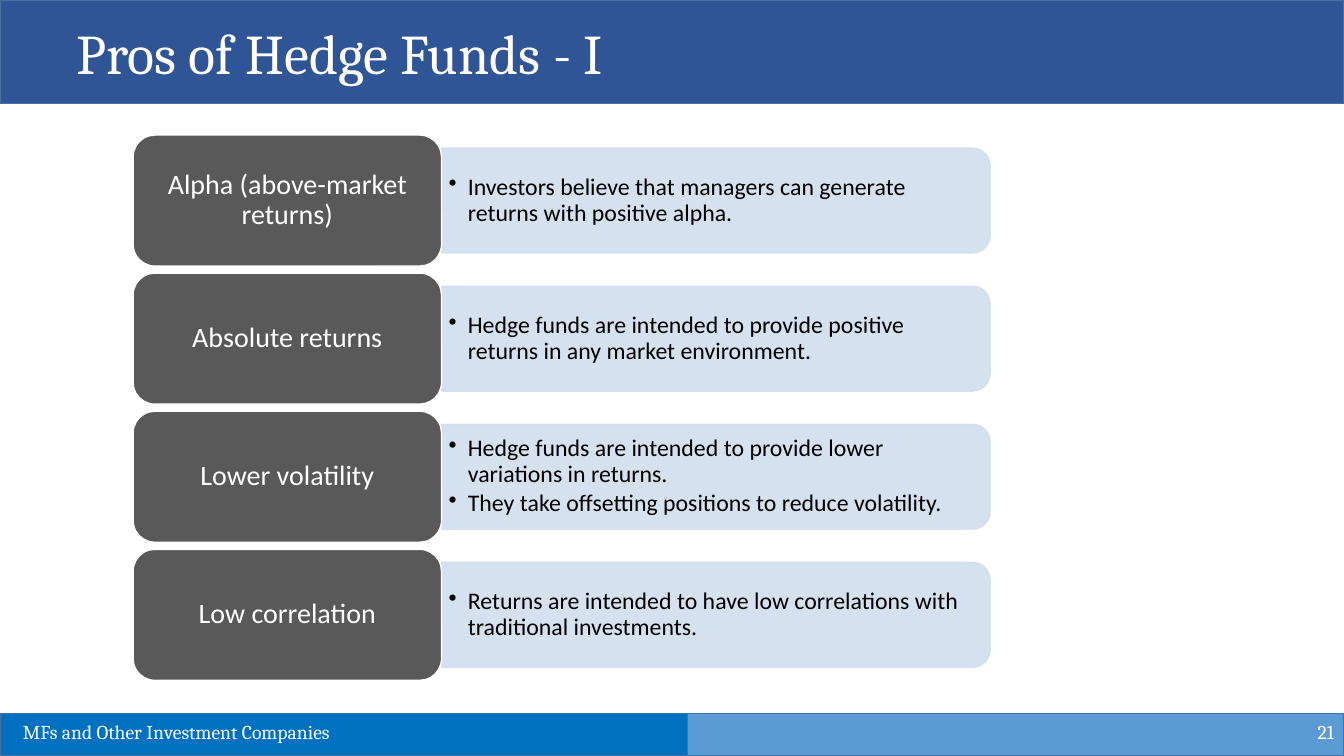
from dataclasses import dataclass

from lxml.etree import SubElement
from pptx import Presentation
from pptx.dml.color import RGBColor
from pptx.enum.shapes import MSO_SHAPE
from pptx.enum.text import MSO_ANCHOR, MSO_AUTO_SIZE, PP_ALIGN
from pptx.oxml.ns import qn
from pptx.util import Pt

TITLE = "Pros of Hedge Funds - I"
FOOTER = "MFs and Other Investment Companies"
PAGE_NUMBER = "21"
PROS = [
    ("Alpha (above-market returns)",
     ["Investors believe that managers can generate returns with positive alpha."]),
    ("Absolute returns",
     ["Hedge funds are intended to provide positive returns in any market environment."]),
    ("Lower volatility",
     ["Hedge funds are intended to provide lower variations in returns.",
      "They take offsetting positions to reduce volatility."]),
    ("Low correlation",
     ["Returns are intended to have low correlations with traditional investments."]),
]


@dataclass(frozen=True)
class Theme:
    heading_font: str = "Cambria"
    body_font: str = "Calibri"
    title_size: int = 40
    label_size: int = 20
    bullet_size: int = 17
    footer_size: int = 14
    title_band: str = "2F5597"
    footer_left: str = "0070C0"
    footer_right: str = "5B9BD5"
    band_line: str = "43739E"
    label: str = "595959"
    panel: str = "D2DEEF"
    white: str = "FFFFFF"
    black: str = "000000"


THEME = Theme()
PX = 9144  # 100 px to the inch
WIDTH, HEIGHT = 1333, 750
FOOTER_TOP, FOOTER_SPLIT = 708, 682
LABEL_LEFT, LABEL_WIDTH, LABEL_HEIGHT = 132, 306, 130
PANEL_LEFT, PANEL_WIDTH, PANEL_HEIGHT = LABEL_LEFT + LABEL_WIDTH, 544, 104
LIST_WIDTH, LIST_HEIGHT = 539, 94
ROW_TOP, ROW_STEP = 134, 137
BULLET_INDENT = 19
PANEL_OPACITY = 90


def px(*lengths):
    return [round(length * PX) for length in lengths]


def add_block(page, kind, area, fill, line):
    block = page.shapes.add_shape(kind, *px(*area))
    block.shadow.inherit = False
    block.fill.solid()
    block.fill.fore_color.rgb = RGBColor.from_string(fill)
    block.line.color.rgb = RGBColor.from_string(line)
    block.line.width = Pt(1)
    return block


def write(shape, lines, font, size, color, align=PP_ALIGN.LEFT,
          anchor=MSO_ANCHOR.TOP, margins=(10, 5), spacing=1.0):
    frame = shape.text_frame
    frame.word_wrap = True
    frame.auto_size = MSO_AUTO_SIZE.NONE
    frame.vertical_anchor = anchor
    frame.margin_left, frame.margin_top = px(*margins)
    frame.margin_right, frame.margin_bottom = px(*margins)
    frame.text = "\n".join(lines)
    for para in frame.paragraphs:
        para.alignment = align
        para.line_spacing = spacing
        para.font.name = font
        para.font.size = Pt(size)
        para.font.color.rgb = RGBColor.from_string(color)
    return frame.paragraphs


def add_bullet(para):
    para.space_after = Pt(2.5)
    properties = para._p.get_or_add_pPr()
    indent = BULLET_INDENT * PX
    properties.set("marL", str(indent))
    properties.set("indent", str(-indent))
    bullet = SubElement(properties, qn("a:buChar"))
    bullet.set("char", "•")
    # The schema wants the bullet ahead of the default run properties.
    defaults = properties.find(qn("a:defRPr"))
    if defaults is not None:
        defaults.addprevious(bullet)


def add_panel(page, middle):
    """Add a panel rounded on its right side, as a quarter-turned tab."""
    center = PANEL_LEFT + PANEL_WIDTH / 2
    area = (center - PANEL_HEIGHT / 2, middle - PANEL_WIDTH / 2, PANEL_HEIGHT, PANEL_WIDTH)
    panel = add_block(page, MSO_SHAPE.ROUND_2_SAME_RECTANGLE, area, THEME.panel, THEME.panel)
    panel.rotation = 90
    for color in panel._element.spPr.iter(qn("a:srgbClr")):
        SubElement(color, qn("a:alpha")).set("val", str(PANEL_OPACITY * 1000))


def add_pro(page, top, label, points):
    middle = top + LABEL_HEIGHT / 2
    add_panel(page, middle)
    box = page.shapes.add_textbox(
        *px(PANEL_LEFT, middle - LIST_HEIGHT / 2, LIST_WIDTH, LIST_HEIGHT))
    for para in write(box, points, THEME.body_font, THEME.bullet_size, THEME.black,
                      anchor=MSO_ANCHOR.MIDDLE, margins=(7, 4), spacing=0.9):
        add_bullet(para)
    card = add_block(page, MSO_SHAPE.ROUNDED_RECTANGLE,
                     (LABEL_LEFT, top, LABEL_WIDTH, LABEL_HEIGHT), THEME.label, THEME.white)
    write(card, [label], THEME.body_font, THEME.label_size, THEME.white,
          PP_ALIGN.CENTER, MSO_ANCHOR.MIDDLE, (8, 4), 0.9)


def add_title(page):
    band = add_block(page, MSO_SHAPE.RECTANGLE, (0, 0, WIDTH, 103),
                     THEME.title_band, THEME.band_line)
    title = page.shapes.title
    title._element.addprevious(band._element)
    title.left, title.top, title.width, title.height = px(66, 13, 1208, 77)
    write(title, [TITLE], THEME.heading_font, THEME.title_size, THEME.white)


def add_footer(page):
    height = HEIGHT - FOOTER_TOP
    for left, right, fill in ((0, FOOTER_SPLIT, THEME.footer_left),
                              (FOOTER_SPLIT, WIDTH, THEME.footer_right)):
        add_block(page, MSO_SHAPE.RECTANGLE, (left, FOOTER_TOP, right - left, height),
                  fill, THEME.band_line)
    for text, area, align, anchor in (
            (PAGE_NUMBER, (1033, 706, 300, 40), PP_ALIGN.RIGHT, MSO_ANCHOR.MIDDLE),
            (FOOTER, (13, 709, 554, 34), PP_ALIGN.LEFT, MSO_ANCHOR.TOP)):
        box = page.shapes.add_textbox(*px(*area))
        write(box, [text], THEME.heading_font, THEME.footer_size, THEME.white, align, anchor)


def main():
    deck = Presentation()
    deck.slide_width, deck.slide_height = px(WIDTH, HEIGHT)
    page = deck.slides.add_slide(deck.slide_layouts.get_by_name("Title Only"))
    add_title(page)
    add_footer(page)
    for row, (label, points) in enumerate(PROS):
        add_pro(page, ROW_TOP + row * ROW_STEP, label, points)
    deck.save("out.pptx")


if __name__ == "__main__":
    main()
